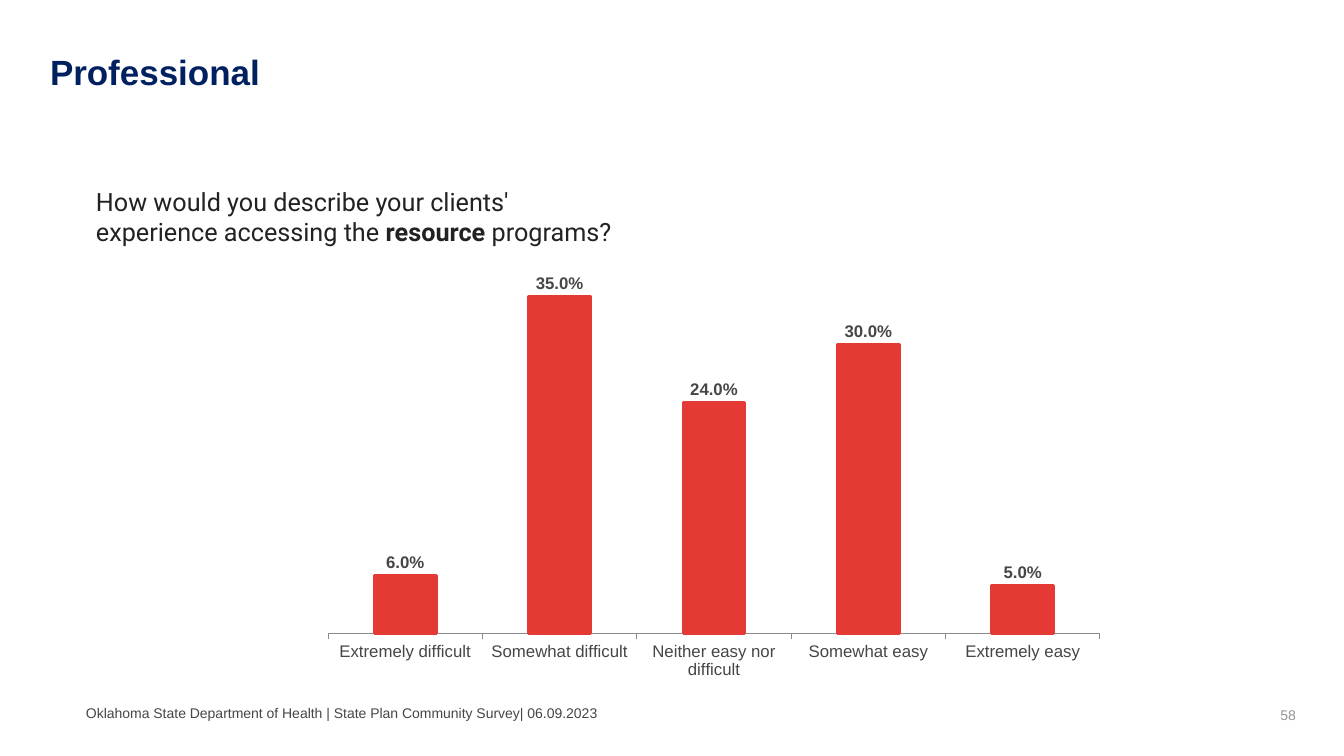
import lxml.etree
import pptx
import pptx.chart.data
import pptx.dml.color
import pptx.enum.chart
import pptx.enum.text
import pptx.util

# Content: each text is a list of (words, bold) spans
TITLE = [("Professional", True)]
QUESTION = [
    ("How would you describe your clients' experience accessing the ", False),
    ("resource ", True),
    ("programs?", False),
]
FOOTER = [("Oklahoma State Department of Health | State Plan Community Survey| 06.09.2023", False)]
PAGE_NUMBER = [("58", False)]
ANSWERS = {
    "Extremely difficult": 0.06,
    "Somewhat difficult": 0.35,
    "Neither easy nor difficult": 0.24,
    "Somewhat easy": 0.30,
    "Extremely easy": 0.05,
}

# Places in px: left, top, width, height
TITLE_AT = (50, 45, 1224, 93)
QUESTION_AT = (86, 181, 542, 132)
CHART_AT = (312, 240, 804, 448)
FOOTER_AT = (86, 702, 897, 22)
NUMBER_AT = (1004, 704, 302, 22)

# Formats
TOP = pptx.enum.text.MSO_ANCHOR.TOP
MIDDLE = pptx.enum.text.MSO_ANCHOR.MIDDLE
LEFT = pptx.enum.text.PP_ALIGN.LEFT
RIGHT = pptx.enum.text.PP_ALIGN.RIGHT
GREY, RED, AXIS_GREY = "464646", "E53935", "8C8C8C"
TITLE_FONT = {"name": "Arial", "size": pptx.util.Pt(25)}
QUESTION_FONT = {"name": "Roboto", "size": pptx.util.Pt(18)}
SMALL_FONT = {"name": "Arial", "size": pptx.util.Pt(10)}
AXIS_FONT = {"name": "Arial", "size": pptx.util.Pt(12), "bold": False}
LABEL_FONT = {"name": "Arial", "size": pptx.util.Pt(12), "bold": True}

EMU_PER_PX = 914400 / 100.8


def px(length):
    return pptx.util.Emu(round(length * EMU_PER_PX))


def color(hex_code):
    return pptx.dml.color.RGBColor.from_string(hex_code)


def set_all(target, values):
    for name, value in values.items():
        setattr(target, name, value)


def format_font(font, values, hex_code):
    set_all(font, values)
    font.color.rgb = color(hex_code)


def place(shape, at):
    set_all(shape, dict(zip(("left", "top", "width", "height"), map(px, at))))


def write(box, spans, font, hex_code, left_inset=0, anchor=TOP, align=LEFT):
    set_all(box.text_frame, {
        "word_wrap": True,
        "auto_size": pptx.enum.text.MSO_AUTO_SIZE.NONE,
        "vertical_anchor": anchor,
        "margin_left": px(left_inset),
        "margin_right": px(10),
        "margin_top": px(5),
        "margin_bottom": px(5),
    })
    para = box.text_frame.paragraphs[0]
    set_all(para, {"alignment": align, "line_spacing": 1.0, "space_before": pptx.util.Pt(0)})
    for words, bold in spans:
        span = para.add_run()
        span.text = words
        format_font(span.font, {**font, "bold": bold}, hex_code)


deck = pptx.Presentation()
set_all(deck, {"slide_width": px(1344), "slide_height": px(756)})
page = deck.slides.add_slide(deck.slide_layouts[5])

# Title
place(page.shapes.title, TITLE_AT)
write(page.shapes.title, TITLE, TITLE_FONT, "002060")

# Footer, page number and question
for at, spans, font, hex_code, inset, anchor, align in (
    (FOOTER_AT, FOOTER, SMALL_FONT, GREY, 0, MIDDLE, LEFT),
    (NUMBER_AT, PAGE_NUMBER, SMALL_FONT, "949494", 10, MIDDLE, RIGHT),
    (QUESTION_AT, QUESTION, QUESTION_FONT, "222222", 10, TOP, LEFT),
):
    box = page.shapes.add_textbox(*map(px, at))
    write(box, spans, font, hex_code, inset, anchor, align)

# Column chart
data = pptx.chart.data.CategoryChartData(number_format="0.0%")
data.categories = list(ANSWERS)
data.add_series("Series 1", list(ANSWERS.values()))
chart = page.shapes.add_chart(
    pptx.enum.chart.XL_CHART_TYPE.COLUMN_CLUSTERED, *map(px, CHART_AT), data
).chart
set_all(chart, {"has_legend": False, "has_title": False})
format_font(chart.font, {"name": "Arial", "size": pptx.util.Pt(18)}, GREY)

# Axes
set_all(chart.value_axis, {
    "visible": False,
    "has_major_gridlines": False,
    "minimum_scale": 0,
    "maximum_scale": 0.4,
})
answer_axis = chart.category_axis
answer_axis.major_tick_mark = pptx.enum.chart.XL_TICK_MARK.OUTSIDE
answer_axis.format.line.color.rgb = color(AXIS_GREY)
answer_axis.format.line.width = pptx.util.Pt(0.75)
format_font(answer_axis.tick_labels.font, AXIS_FONT, GREY)

# Columns and their labels
plot = chart.plots[0]
set_all(plot, {"gap_width": 150, "vary_by_categories": False})
columns = plot.series[0].format
columns.fill.solid()
columns.fill.fore_color.rgb = color(RED)
columns.line.color.rgb = color(RED)
columns.line.width = pptx.util.Pt(2.25)
labels = plot.series[0].data_labels
set_all(labels, {
    "show_value": True,
    "number_format": "0.0%",
    "number_format_is_linked": False,
    "position": pptx.enum.chart.XL_LABEL_POSITION.OUTSIDE_END,
})
format_font(labels.font, LABEL_FONT, GREY)

deck.save("out.pptx")
